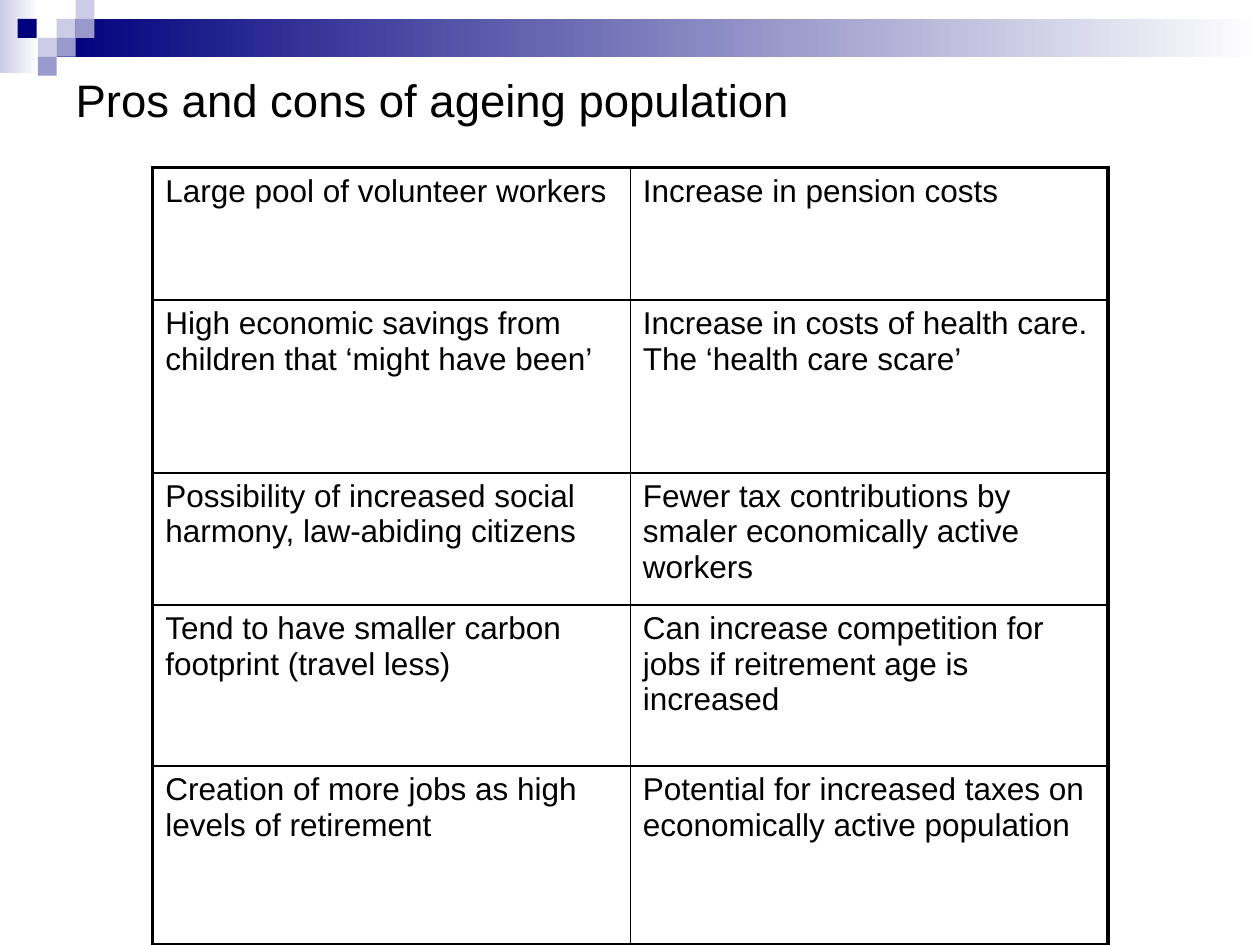
"""Build a slide with a two-column table of pros and cons of an ageing population."""
from lxml import etree
from pptx import Presentation
from pptx import util as u
from pptx.dml.color import RGBColor
from pptx.enum import shapes, text
from pptx.oxml import ns

COLORS = {"navy": "00007D", "mid": "9999CC", "pale": "CCCCE6", "white": "FFFFFF", "black": "000000"}
FONT = "Arial"
TILE = 10.8
ROWS = [
    (75.6, "Large pool of volunteer workers", "Increase in pension costs"),
    (98.8, "High economic savings from children that ‘might have been’",
     "Increase in costs of health care. The ‘health care scare’"),
    (75.6, "Possibility of increased social harmony, law-abiding citizens",
     "Fewer tax contributions by smaler economically active workers"),
    (92, "Tend to have smaller carbon footprint (travel less)",
     "Can increase competition for jobs if reitrement age is increased"),
    (102.2, "Creation of more jobs as high levels of retirement",
     "Potential for increased taxes on economically active population"),
]


def add_block(slide, left, top, width, height, *names):
    shape = slide.shapes.add_shape(
        shapes.MSO_SHAPE.RECTANGLE, u.Pt(left), u.Pt(top), u.Pt(width), u.Pt(height))
    shape.shadow.inherit = False
    shape.line.fill.background()
    if len(names) == 1:
        shape.fill.solid()
        shape.fill.fore_color.rgb = RGBColor.from_string(COLORS[names[0]])
    else:
        shape.fill.gradient()
        shape.fill.gradient_angle = 0
        for stop, name in zip(shape.fill.gradient_stops, names):
            stop.color.rgb = RGBColor.from_string(COLORS[name])


def set_borders(cell, widths):
    properties = cell._tc.get_or_add_tcPr()
    for index, (side, width) in enumerate(widths.items()):
        line = etree.Element(ns.qn(f"a:ln{side}"), w=str(u.Pt(width)))
        fill = etree.SubElement(line, ns.qn("a:solidFill"))
        etree.SubElement(fill, ns.qn("a:srgbClr"), val=COLORS["black"])
        properties.insert(index, line)


presentation = Presentation()
presentation.slide_width, presentation.slide_height = u.Pt(720), u.Pt(540)
slide = presentation.slides.add_slide(presentation.slide_layouts.get_by_name("Title Only"))

add_block(slide, 0, 0, 22.3, 41.8, "pale", "white")
add_block(slide, 32.4, TILE, 687.6, 21.6, "navy", "white")
tiles = [(32.4, 1, "pale"), (43.2, 0, "pale"), (43.2, 1, "mid"), (21.6, 2, "pale"),
         (10.1, 1, "navy"), (32.4, 2, "mid"), (21.6, 3, "mid")]
for left, row, name in tiles:
    add_block(slide, left, row * TILE, TILE, TILE, name)

title = slide.shapes.title
title.left, title.top, title.width, title.height = u.Pt(36), u.Pt(36), u.Pt(648), u.Pt(41.8)
title.text_frame.text = "Pros and cons of ageing population"
title.text_frame.vertical_anchor = text.MSO_ANCHOR.MIDDLE
paragraph = title.text_frame.paragraphs[0]
paragraph.alignment = text.PP_ALIGN.LEFT
paragraph.font.size = u.Pt(26)
paragraph.font.name = FONT
paragraph.font.color.rgb = RGBColor.from_string(COLORS["black"])

table_height = sum(row[0] for row in ROWS)
table = slide.shapes.add_table(
    len(ROWS), 2, u.Pt(87.3), u.Pt(95.8), u.Pt(545.8), u.Pt(table_height)).table
table.first_row = table.horz_banding = False
for row_index, (height, *entries) in enumerate(ROWS):
    table.rows[row_index].height = u.Pt(height)
    for column_index, entry in enumerate(entries):
        cell = table.cell(row_index, column_index)
        cell.text = entry
        cell.fill.background()
        paragraph = cell.text_frame.paragraphs[0]
        paragraph.font.size = u.Pt(18)
        paragraph.font.name = FONT
        paragraph.font.color.rgb = RGBColor.from_string(COLORS["black"])
        outer_sides = {"L": column_index == 0, "R": column_index == 1,
                       "T": row_index == 0, "B": row_index == len(ROWS) - 1}
        set_borders(cell, {side: 2.25 if outer else 1 for side, outer in outer_sides.items()})

presentation.save("out.pptx")
